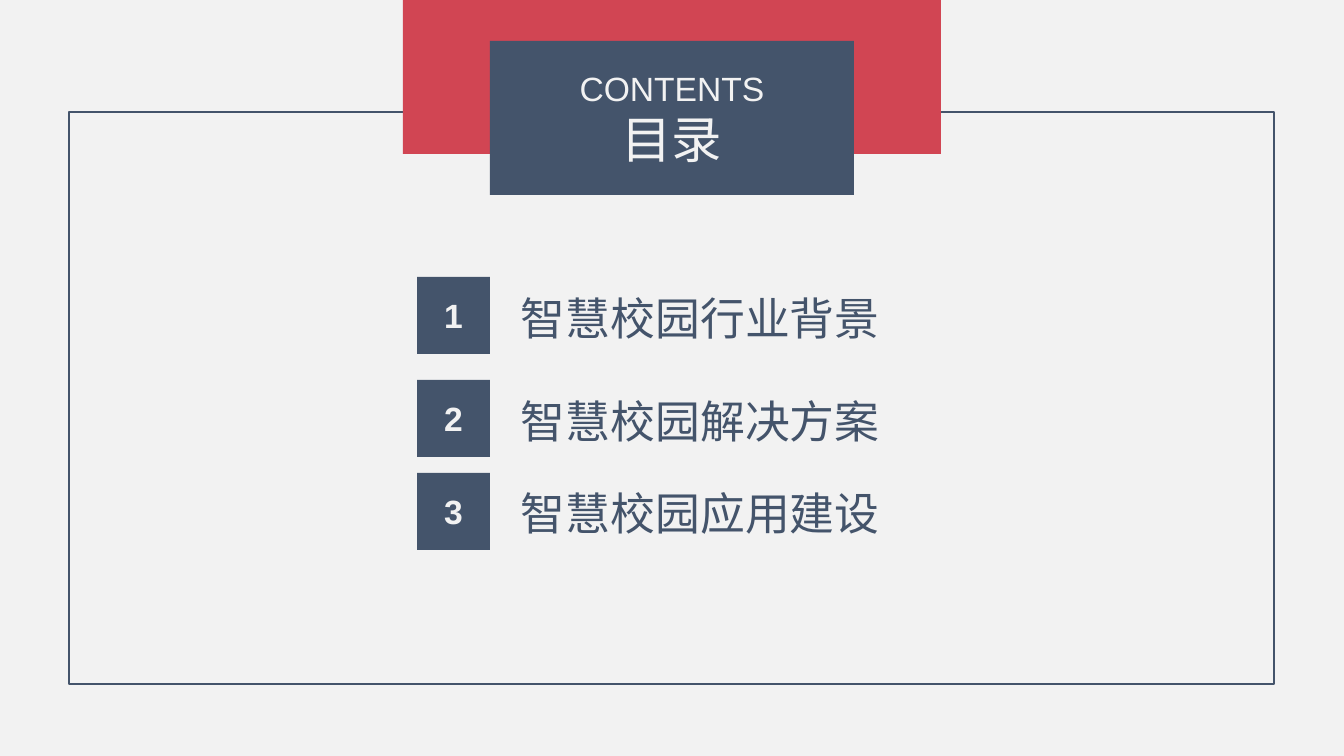
from pptx import Presentation
from pptx import util as u
from pptx.dml.color import RGBColor
from pptx.enum import shapes, text
from pptx.oxml.ns import qn

HEADING = [("CONTENTS", 24), ("目录", 36)]
CHAPTERS = [
    ("智慧校园行业背景", 277),
    ("智慧校园解决方案", 380),
    ("智慧校园应用建设", 473),
]
COLORS = {"paper": "F2F2F2", "navy": "44546B", "red": "D14553"}
FONT = "Arial"
EMU_PER_PX = 914400 / 100.8
PT_PER_PX = 72 / 100.8

FRAME = (69, 112, 1205, 572)
BANNER = (403, 0, 538, 154)
TITLE = (490, 41, 364, 154)
LIST_LEFT, LIST_WIDTH, LIST_OFFSET = 511, 382, 6
BADGE_LEFT, BADGE_WIDTH, BADGE_HEIGHT = 417, 73, 77
LINE_PT = 40


def px(n):
    return u.Emu(round(n * EMU_PER_PX))


def rgb(name):
    return RGBColor.from_string(COLORS[name])


def place(sp, box):
    sp.left, sp.top, sp.width, sp.height = map(px, box)


def add_rect(s, box, fill=None, line=None):
    sp = s.shapes.add_shape(shapes.MSO_SHAPE.RECTANGLE, *map(px, box))
    sp.shadow.inherit = False
    if fill:
        sp.fill.solid()
        sp.fill.fore_color.rgb = rgb(fill)
    else:
        sp.fill.background()
    if line:
        sp.line.color.rgb = rgb(line)
        sp.line.width = u.Pt(1)
    else:
        sp.line.fill.background()
    return sp


def setup_frame(tf, margin=0, anchor=text.MSO_ANCHOR.MIDDLE, wrap=True):
    tf.auto_size = text.MSO_AUTO_SIZE.NONE
    tf.word_wrap = wrap
    tf.vertical_anchor = anchor
    tf.margin_left = tf.margin_right = px(margin)
    tf.margin_top = tf.margin_bottom = px(margin / 2)


def write(p, content, size, color="paper", bold=False,
          align=text.PP_ALIGN.CENTER, before=0):
    p.alignment = align
    p.space_before = u.Pt(before)
    r = p.add_run()
    r.text = content
    r.font.name = FONT
    r.font.size = u.Pt(size)
    r.font.bold = bold
    r.font.color.rgb = rgb(color)


def paragraph(tf, i):
    return tf.add_paragraph() if i else tf.paragraphs[0]


def add_title(s):
    sp = s.shapes.title
    place(sp, TITLE)
    sp.fill.solid()
    sp.fill.fore_color.rgb = rgb("navy")
    setup_frame(sp.text_frame)
    for i, (content, size) in enumerate(HEADING):
        write(paragraph(sp.text_frame, i), content, size)
    sp._element.getparent().append(sp._element)


def add_chapters(s):
    tops = [top for _, top in CHAPTERS]
    sp = s.placeholders[1]
    place(sp, (LIST_LEFT, tops[0] + LIST_OFFSET, LIST_WIDTH,
               tops[-1] - tops[0] + BADGE_HEIGHT))
    tf = sp.text_frame
    setup_frame(tf, margin=10, anchor=text.MSO_ANCHOR.TOP, wrap=False)
    for i, (content, top) in enumerate(CHAPTERS):
        p = paragraph(tf, i)
        pPr = p._p.get_or_add_pPr()
        pPr.set("marL", "0")
        pPr.set("indent", "0")
        pPr.append(pPr.makeelement(qn("a:buNone"), {}))
        p.line_spacing = u.Pt(LINE_PT)
        gap = (top - tops[i - 1]) * PT_PER_PX - LINE_PT if i else 0
        write(p, content, 32, color="navy", align=text.PP_ALIGN.LEFT, before=gap)

        badge = add_rect(s, (BADGE_LEFT, top, BADGE_WIDTH, BADGE_HEIGHT), fill="navy")
        setup_frame(badge.text_frame)
        write(badge.text_frame.paragraphs[0], str(i + 1), 24, bold=True)


def main():
    prs = Presentation()
    prs.slide_width, prs.slide_height = px(1344), px(756)
    s = prs.slides.add_slide(prs.slide_layouts[1])
    s.background.fill.solid()
    s.background.fill.fore_color.rgb = rgb("paper")
    add_rect(s, FRAME, line="navy")
    add_rect(s, BANNER, fill="red")
    add_title(s)
    add_chapters(s)
    prs.save("out.pptx")


if __name__ == "__main__":
    main()
